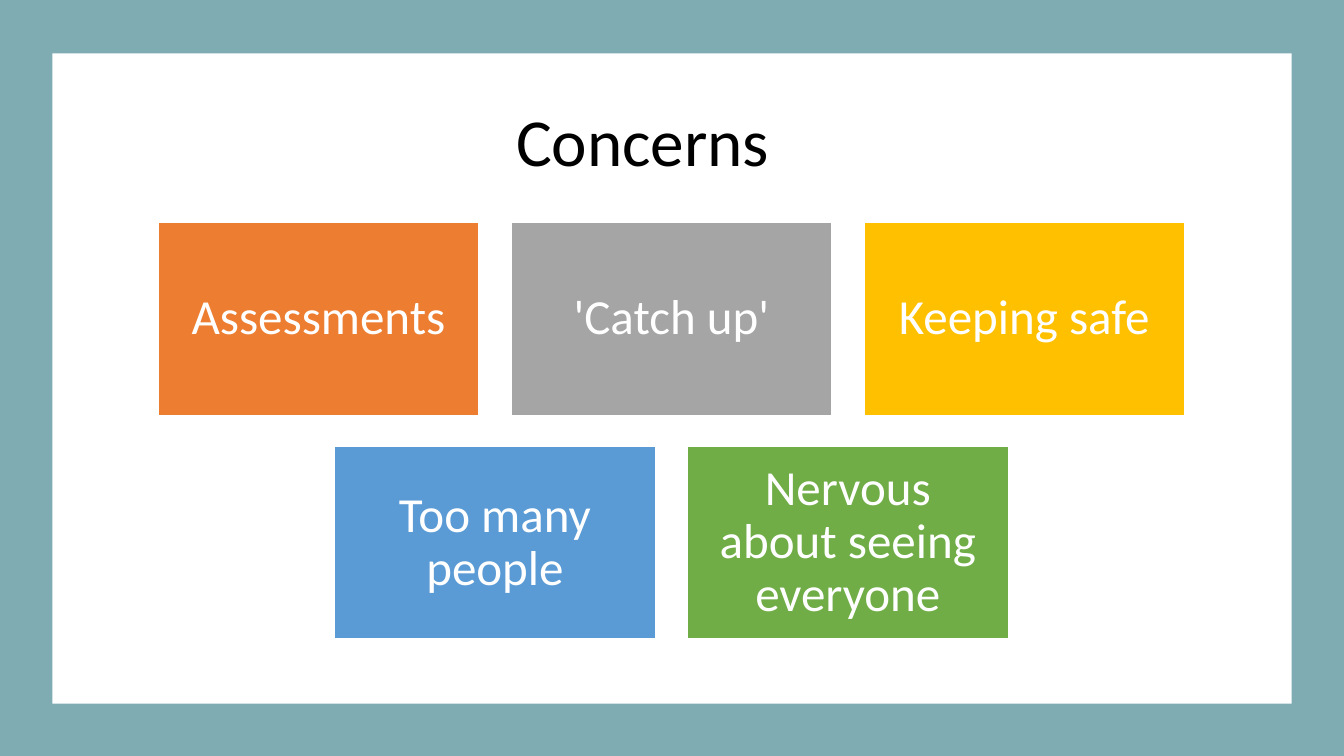
from dataclasses import dataclass

import pptx
import pptx.dml.color
import pptx.enum.shapes
import pptx.enum.text
import pptx.shapes.autoshape
import pptx.slide
import pptx.text.text
import pptx.util

EMU_PER_PX = 9144  # 100 px to the inch
SLIDE_W, SLIDE_H = 1333, 750
CARD_W, CARD_H = 318, 191
GAP_X, GAP_Y = 32, 31
CARDS_TOP = 221
CARD_INSET = 15
FONT = "Calibri"

COLORS = {
    "teal": "7FABB3",
    "white": "FFFFFF",
    "black": "000000",
    "orange": "ED7D31",
    "gray": "A5A5A5",
    "gold": "FFC000",
    "blue": "5B9BD5",
    "green": "70AD47",
}


@dataclass(frozen=True)
class Box:
    left: int
    top: int
    width: int
    height: int

    def emu(self) -> list[pptx.util.Emu]:
        return [px(n) for n in (self.left, self.top, self.width, self.height)]


@dataclass(frozen=True)
class Card:
    text: str
    color: str


CARD_ROWS = [
    [
        Card("Assessments", "orange"),
        Card("'Catch up'", "gray"),
        Card("Keeping safe", "gold"),
    ],
    [
        Card("Too many people", "blue"),
        Card("Nervous about seeing everyone", "green"),
    ],
]


def px(n: int) -> pptx.util.Emu:
    return pptx.util.Emu(n * EMU_PER_PX)


def rgb(name: str) -> pptx.dml.color.RGBColor:
    return pptx.dml.color.RGBColor.from_string(COLORS[name])


def add_rect(s: pptx.slide.Slide, box: Box, color: str) -> pptx.shapes.autoshape.Shape:
    sp = s.shapes.add_shape(pptx.enum.shapes.MSO_SHAPE.RECTANGLE, *box.emu())
    sp.shadow.inherit = False
    sp.fill.solid()
    sp.fill.fore_color.rgb = rgb(color)
    sp.line.fill.background()
    return sp


def write(tf: pptx.text.text.TextFrame, text: str, size: int, color: str) -> None:
    tf.word_wrap = True
    p = tf.paragraphs[0]
    p.alignment = pptx.enum.text.PP_ALIGN.CENTER
    p.line_spacing = 0.9
    r = p.add_run()
    r.text = text
    r.font.name = FONT
    r.font.size = pptx.util.Pt(size)
    r.font.color.rgb = rgb(color)


def add_title(s: pptx.slide.Slide, box: Box, text: str) -> None:
    tf = s.shapes.add_textbox(*box.emu()).text_frame
    tf.vertical_anchor = pptx.enum.text.MSO_ANCHOR.BOTTOM
    write(tf, text, 48, "black")


def add_card(s: pptx.slide.Slide, box: Box, card: Card) -> None:
    sp = add_rect(s, box, card.color)
    sp.line.color.rgb = rgb("white")
    sp.line.width = pptx.util.Pt(1)
    tf = sp.text_frame
    tf.vertical_anchor = pptx.enum.text.MSO_ANCHOR.MIDDLE
    tf.margin_left = tf.margin_right = px(CARD_INSET)
    tf.margin_top = tf.margin_bottom = px(CARD_INSET)
    write(tf, card.text, 35, "white")


def main() -> None:
    prs = pptx.Presentation()
    prs.slide_width, prs.slide_height = px(SLIDE_W), px(SLIDE_H)
    s = prs.slides.add_slide(prs.slide_layouts[6])

    # Teal frame around a white panel
    add_rect(s, Box(0, 0, SLIDE_W, SLIDE_H), "teal")
    add_rect(s, Box(52, 53, 1229, 645), "white")

    add_title(s, Box(87, 42, 1101, 142), "Concerns")

    # Card rows, each centred on the slide
    for i, row in enumerate(CARD_ROWS):
        row_w = len(row) * (CARD_W + GAP_X) - GAP_X
        left = (SLIDE_W - row_w) // 2
        top = CARDS_TOP + i * (CARD_H + GAP_Y)
        for j, card in enumerate(row):
            add_card(s, Box(left + j * (CARD_W + GAP_X), top, CARD_W, CARD_H), card)

    prs.save("out.pptx")


if __name__ == "__main__":
    main()
